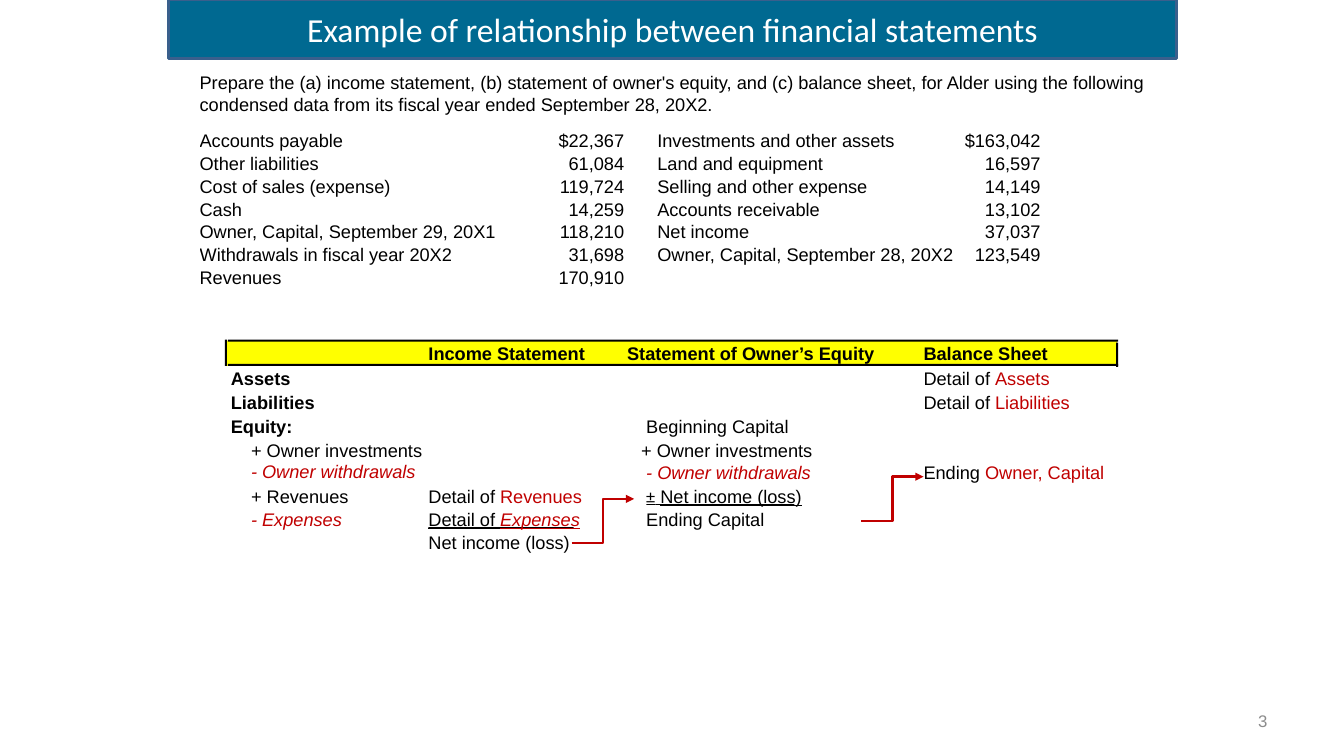
"""Build a slide on how the financial statements relate to each other."""
from lxml import etree
from pptx import Presentation
from pptx.dml.color import RGBColor
from pptx.enum.shapes import MSO_CONNECTOR as LINK, MSO_SHAPE as SHAPE
from pptx.enum.text import MSO_ANCHOR as ANCHOR, PP_ALIGN as ALIGN
from pptx.oxml.ns import qn
from pptx.util import Inches, Pt

COLORS = {name: RGBColor.from_string(value) for name, value in {
    "title": "006991", "title edge": "3A5F8C", "header": "FFFF00", "white": "FFFFFF",
    "black": "000000", "red": "C00000", "gray": "8C8C8C"}.items()}


def write(frame, runs, size=13, color="black", font="Arial", align=ALIGN.LEFT):
    """Fill a frame with (text, marks) runs: b bold, i italic, u underline, r red, c Calibri."""
    paragraph = frame.paragraphs[0]
    paragraph.alignment = align
    paragraph.font.size = Pt(size)
    paragraph.font.name = font
    paragraph.font.color.rgb = COLORS[color]
    for text, marks in runs:
        run = paragraph.add_run()
        run.text = text
        if "b" in marks:
            run.font.bold = True
        if "i" in marks:
            run.font.italic = True
        if "u" in marks:
            run.font.underline = True
        if "r" in marks:
            run.font.color.rgb = COLORS["red"]
        if "c" in marks:
            run.font.name = "Calibri"


def add_label(left, top, width, height, runs):
    """Place a text box without insets."""
    frame = slide.shapes.add_textbox(
        Inches(left), Inches(top), Inches(width), Inches(height)).text_frame
    frame.word_wrap = True
    frame.margin_left = frame.margin_right = frame.margin_top = frame.margin_bottom = 0
    write(frame, runs)


deck = Presentation()
deck.slide_width, deck.slide_height = Inches(13.33), Inches(7.5)
slide = deck.slides.add_slide(deck.slide_layouts[6])

title = slide.shapes.add_shape(SHAPE.RECTANGLE, Inches(1.67), 0, Inches(10), Inches(0.58))
title.shadow.inherit = False
title.fill.solid()
title.fill.fore_color.rgb = COLORS["title"]
title.line.color.rgb = COLORS["title edge"]
title.line.width = Pt(2)
title.text_frame.vertical_anchor = ANCHOR.MIDDLE
write(title.text_frame, [("Example of relationship between financial statements", "")],
      24, "white", "Calibri", ALIGN.CENTER)

add_label(1.98, 0.71, 9.75, 0.43, [(
    "Prepare the (a) income statement, (b) statement of owner's equity, and (c) balance sheet, "
    "for Alder using the following condensed data from its fiscal year ended September 28, 20X2.",
    "")])

accounts = [
    ("Accounts payable", "$22,367", "Investments and other assets", "$163,042"),
    ("Other liabilities", "61,084", "Land and equipment", "16,597"),
    ("Cost of sales (expense)", "119,724", "Selling and other expense", "14,149"),
    ("Cash", "14,259", "Accounts receivable", "13,102"),
    ("Owner, Capital, September 29, 20X1", "118,210", "Net income", "37,037"),
    ("Withdrawals in fiscal year 20X2", "31,698", "Owner, Capital, September 28, 20X2", "123,549"),
    ("Revenues", "170,910", "", ""),
]
account_table = slide.shapes.add_table(
    len(accounts), 4, Inches(1.98), Inches(1.3), Inches(8.34), Inches(1.59)).table
account_table.first_row = account_table.horz_banding = False
for column, width in zip(account_table.columns, (3.32, 0.9, 3.33, 0.79)):
    column.width = Inches(width)
for row, entries in enumerate(accounts):
    for col, entry in enumerate(entries):
        cell = account_table.cell(row, col)
        cell.fill.background()
        cell.margin_top = cell.margin_bottom = 0
        cell.margin_right = Inches(0.01 if col == 1 else 0)
        cell.margin_left = Inches(0.32 if col == 2 else 0)
        write(cell.text_frame, [(entry, "")] if entry else [],
              align=ALIGN.RIGHT if col % 2 else ALIGN.LEFT)

bars = [
    ("header", 2.24, 3.38, 8.84, 0.25),
    ("black", 2.23, 3.37, 0.02, 0.26),
    ("black", 11.07, 3.4, 0.02, 0.24),
    ("black", 2.26, 3.37, 8.83, 0.02),
    ("black", 2.26, 3.61, 8.83, 0.02),
    ("black", 6.41, 5, 0.09, 0.01),
    ("black", 6.5, 5, 1.38, 0.01),
    ("black", 4.25, 5.23, 1.44, 0.01),
]
for color, *place in bars:
    bar = slide.shapes.add_shape(SHAPE.RECTANGLE, *map(Inches, place))
    bar.shadow.inherit = False
    bar.fill.solid()
    bar.fill.fore_color.rgb = COLORS[color]
    bar.line.fill.background()

ITEM, CHANGE, INCOME, EQUITY, BALANCE = 2.29, 2.49, 4.25, 6.41, 9.16
statement_rows = [
    (3.4, [(INCOME, [("Income Statement", "b")]),
           (6.22, [("Statement of Owner’s Equity", "b")]),
           (BALANCE, [("Balance Sheet", "b")])]),
    (3.64, [(ITEM, [("Assets", "b")]), (BALANCE, [("Detail of ", ""), ("Assets", "r")])]),
    (3.88, [(ITEM, [("Liabilities", "b")]),
            (BALANCE, [("Detail of ", ""), ("Liabilities", "r")])]),
    (4.12, [(ITEM, [("Equity:", "b")]), (EQUITY, [("Beginning Capital", "")])]),
    (4.36, [(CHANGE, [("+ Owner investments", "")]), (6.36, [("+ Owner investments", "")])]),
    (4.57, [(CHANGE, [("- Owner withdrawals", "ir")])]),
    (4.58, [(EQUITY, [("- Owner withdrawals", "ir")]),
            (BALANCE, [("Ending ", ""), ("Owner, Capital", "r")])]),
    (4.81, [(CHANGE, [("+ Revenues", "")]),
            (INCOME, [("Detail of ", ""), ("Revenues", "r")]),
            (EQUITY, [("±", "c")]),
            (6.5, [(" ", ""), ("Net income (loss)", "u")])]),
    (5.04, [(CHANGE, [("- Expenses", "ir")]),
            (INCOME, [("Detail of ", "u"), ("Expenses", "uir")]),
            (EQUITY, [("Ending Capital", "")])]),
    (5.27, [(INCOME, [("Net income (loss)", "")])]),
]
for top, labels in statement_rows:
    for left, runs in labels:
        add_label(left, top, 2.6 if left > 6 else 1.9, 0.22, runs)

for left, top in ((5.67, 4.95), (8.54, 4.73)):
    flow = slide.shapes.add_connector(
        LINK.ELBOW, Inches(left), Inches(top + 0.44), Inches(left + 0.62), Inches(top))
    flow.line.color.rgb = COLORS["red"]
    flow.line.width = Pt(1.75)
    properties = flow._element.spPr
    etree.SubElement(properties.find(qn("a:ln")), qn("a:tailEnd"), type="triangle")
    etree.SubElement(properties, qn("a:effectLst"))

page_number = slide.shapes.add_textbox(
    Inches(9.56), Inches(6.95), Inches(3.11), Inches(0.4)).text_frame
page_number.word_wrap = True
page_number.vertical_anchor = ANCHOR.MIDDLE
write(page_number, [("3", "")], 12, "gray", align=ALIGN.RIGHT)

deck.save("out.pptx")
